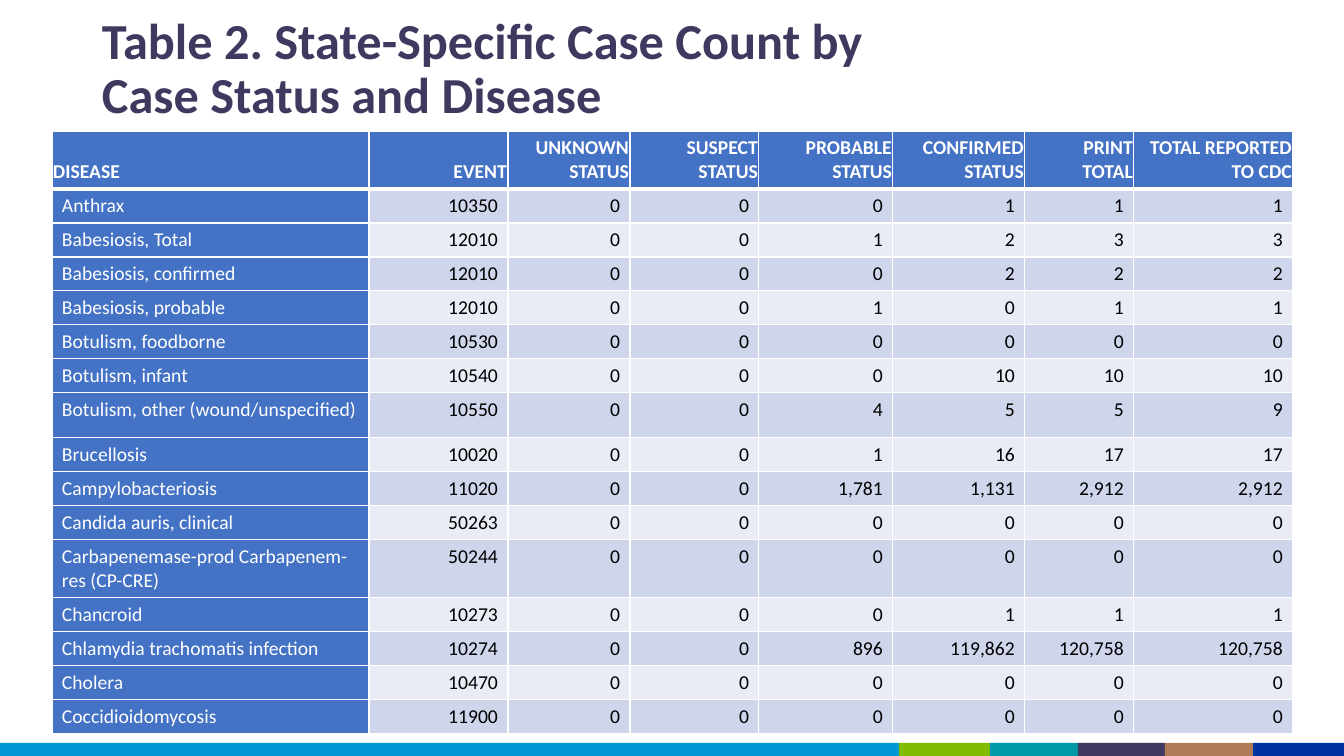
from itertools import pairwise

from lxml import etree
from pptx import Presentation
from pptx.dml.color import RGBColor
from pptx.enum.shapes import MSO_SHAPE
from pptx.enum.text import MSO_ANCHOR, PP_ALIGN
from pptx.oxml.ns import qn
from pptx.util import Pt

RECT = MSO_SHAPE.RECTANGLE
TOP, BOTTOM = MSO_ANCHOR.TOP, MSO_ANCHOR.BOTTOM
LEFT, RIGHT = PP_ALIGN.LEFT, PP_ALIGN.RIGHT

WIDTH, HEIGHT = 1344, 756
FONT = "Calibri"
WHITE, BLACK, BLUE, PURPLE = "FFFFFF", "000000", "4472C4", "3F395F"
BANDS = ["CFD5EA", "E9EBF5"]

STRIPE_EDGES = [0, 899, 990, 1078, 1165, 1253, WIDTH]
STRIPE_COLORS = ["0197D6", "81BC00", "0099A7", PURPLE, "B07C57", "0033A1"]

HEADERS = ["DISEASE", "EVENT", "UNKNOWN\vSTATUS", "SUSPECT\vSTATUS", "PROBABLE\vSTATUS",
           "CONFIRMED\vSTATUS", "PRINT\vTOTAL", "TOTAL REPORTED\vTO CDC"]
COLUMN_WIDTHS = [317, 139, 122, 129, 134, 132, 109, 159]
HEADER_HEIGHT, ROW_HEIGHT = 58, 34
TALL_ROWS = {"10550": 45, "50244": 58}
CASES = [
    ("Anthrax", "10350", "0", "0", "0", "1", "1", "1"),
    ("Babesiosis, Total", "12010", "0", "0", "1", "2", "3", "3"),
    ("Babesiosis, confirmed", "12010", "0", "0", "0", "2", "2", "2"),
    ("Babesiosis, probable", "12010", "0", "0", "1", "0", "1", "1"),
    ("Botulism, foodborne", "10530", "0", "0", "0", "0", "0", "0"),
    ("Botulism, infant", "10540", "0", "0", "0", "10", "10", "10"),
    ("Botulism, other (wound/unspecified)", "10550", "0", "0", "4", "5", "5", "9"),
    ("Brucellosis", "10020", "0", "0", "1", "16", "17", "17"),
    ("Campylobacteriosis", "11020", "0", "0", "1,781", "1,131", "2,912", "2,912"),
    ("Candida auris, clinical", "50263", "0", "0", "0", "0", "0", "0"),
    ("Carbapenemase-prod Carbapenem-res (CP-CRE)", "50244", "0", "0", "0", "0", "0", "0"),
    ("Chancroid", "10273", "0", "0", "0", "1", "1", "1"),
    ("Chlamydia trachomatis infection", "10274", "0", "0", "896", "119,862", "120,758", "120,758"),
    ("Cholera", "10470", "0", "0", "0", "0", "0", "0"),
    ("Coccidioidomycosis", "11900", "0", "0", "0", "0", "0", "0"),
]


def px(n):
    return round(n * 12192000 / WIDTH)


def color(value):
    return RGBColor.from_string(value)


def set_text(p, text, size, ink, bold=False, align=LEFT):
    p.text = text
    p.alignment = align
    p.font.name, p.font.size, p.font.bold = FONT, Pt(size), bold
    p.font.color.rgb = color(ink)


def set_margins(box, left, top, right, bottom):
    box.margin_left, box.margin_top = px(left), px(top)
    box.margin_right, box.margin_bottom = px(right), px(bottom)


def set_borders(cell, top, bottom):
    """Draw white cell edges; top and bottom are widths in points."""
    tc_pr = cell._tc.get_or_add_tcPr()
    for i, (side, width) in enumerate([("L", 1), ("R", 1), ("T", top), ("B", bottom)]):
        ln = etree.Element(qn(f"a:ln{side}"), w=str(Pt(width)))
        fill = etree.SubElement(ln, qn("a:solidFill"))
        etree.SubElement(fill, qn("a:srgbClr"), val=WHITE)
        tc_pr.insert(i, ln)


def add_title(s, x, y, w, h):
    tf = s.shapes.add_textbox(px(x), px(y), px(w), px(h)).text_frame
    tf.word_wrap = True
    set_margins(tf, 10, 0, 10, 0)
    p = tf.paragraphs[0]
    set_text(p, "Table 2. State-Specific Case Count by\vCase Status and Disease", 36, PURPLE, True)
    p.line_spacing = 0.9


def add_stripes(s, y, h):
    for (left, right), fill in zip(pairwise(STRIPE_EDGES), STRIPE_COLORS):
        sp = s.shapes.add_shape(RECT, px(left), px(y), px(right - left), px(h))
        sp.shadow.inherit = False
        sp.fill.solid()
        sp.fill.fore_color.rgb = color(fill)
        sp.line.fill.background()


def add_case_table(s, x, y):
    heights = [HEADER_HEIGHT] + [TALL_ROWS.get(case[1], ROW_HEIGHT) for case in CASES]
    table = s.shapes.add_table(len(heights), len(HEADERS), px(x), px(y),
                               px(sum(COLUMN_WIDTHS)), px(sum(heights))).table
    table.horz_banding = False
    for column, width in zip(table.columns, COLUMN_WIDTHS):
        column.width = px(width)
    for r, (height, values) in enumerate(zip(heights, [HEADERS] + CASES)):
        table.rows[r].height = px(height)
        header = r == 0
        for c, value in enumerate(values):
            cell = table.cell(r, c)
            label = header or c == 0
            cell.fill.solid()
            cell.fill.fore_color.rgb = color(BLUE if label else BANDS[(r - 1) % 2])
            cell.vertical_anchor = BOTTOM if header else TOP
            side = 1 if header else 10
            set_margins(cell, side, 5, side, 5)
            set_borders(cell, 3 if r == 1 else 1, 3 if header else 1)
            set_text(cell.text_frame.paragraphs[0], value, 14, WHITE if label else BLACK,
                     header, LEFT if c == 0 else RIGHT)


def main():
    prs = Presentation()
    prs.slide_width, prs.slide_height = px(WIDTH), px(HEIGHT)
    s = prs.slides.add_slide(prs.slide_layouts[6])
    add_stripes(s, 743, 13)
    add_title(s, 92, 16, 1158, 111)
    add_case_table(s, 52, 131)
    prs.save("out.pptx")


if __name__ == "__main__":
    main()
